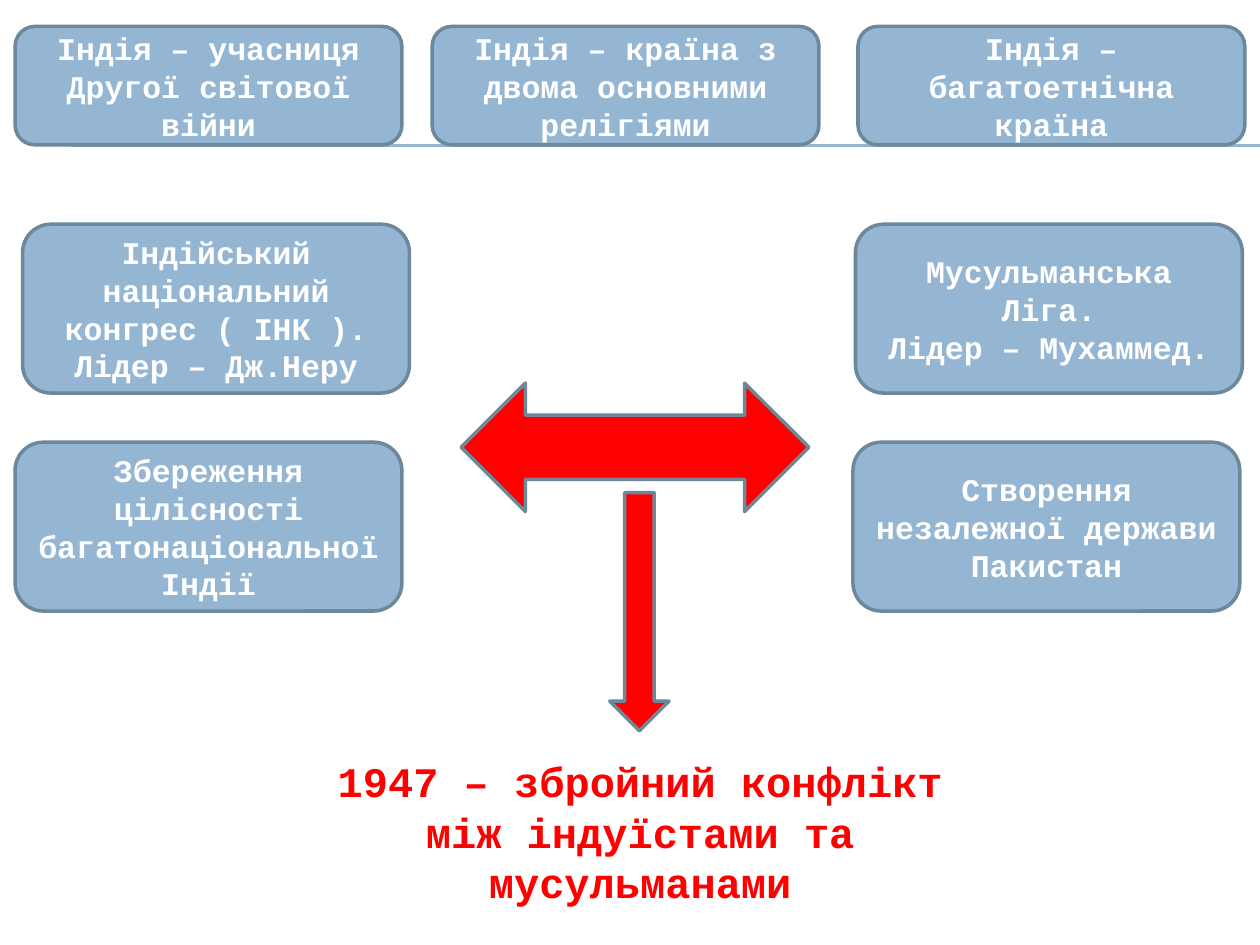
from lxml import etree
from pptx import Presentation
from pptx.dml.color import RGBColor
from pptx.enum.shapes import MSO_CONNECTOR, MSO_SHAPE
from pptx.enum.text import MSO_ANCHOR, PP_ALIGN
from pptx.oxml.ns import qn
from pptx.util import Inches, Pt

BLUE, EDGE, RED, WHITE = "94B6D2", "6D879B", "FF0000", "FFFFFF"


def write_text(shape, text, size=18, color=WHITE, anchor=MSO_ANCHOR.MIDDLE):
    """Fill the shape with centred bold text, one paragraph per line."""
    frame = shape.text_frame
    frame.word_wrap = True
    frame.vertical_anchor = anchor
    frame.text = text
    for para in frame.paragraphs:
        para.alignment = PP_ALIGN.CENTER
        for span in para.runs:
            span.font.name = "Courier New"
            span.font.size = Pt(size)
            span.font.bold = True
            span.font.color.rgb = RGBColor.from_string(color)


def add_block(kind, left, top, width, height, fill):
    block = page.shapes.add_shape(
        kind, Inches(left), Inches(top), Inches(width), Inches(height))
    block.shadow.inherit = False
    block.fill.solid()
    block.fill.fore_color.rgb = RGBColor.from_string(fill)
    block.line.color.rgb = RGBColor.from_string(EDGE)
    block.line.width = Pt(2)
    return block


deck = Presentation()
deck.slide_width, deck.slide_height = Inches(10), Inches(7.5)
page = deck.slides.add_slide(deck.slide_layouts[6])

# Double rule behind the top row
for y in (1.15, 1.16):
    rule = page.shapes.add_connector(
        MSO_CONNECTOR.STRAIGHT, Inches(0.56), Inches(y), Inches(10), Inches(y))
    rule.line.color.rgb = RGBColor.from_string(BLUE)
    rule.line.width = Pt(0.75)
    etree.SubElement(rule._element.spPr, qn("a:effectLst"))

# Rows of boxes: top, height, then left edge and text of each box
box_width = 3.07
rows = [
    (0.21, 0.94, [(0.12, "Індія – учасниця\nДругої світової війни"),
                  (3.43, "Індія – країна з двома основними релігіями"),
                  (6.81, "Індія – багатоетнічна країна")]),
    (1.78, 1.34, [(0.18, "Індійський національний конгрес ( ІНК ).\nЛідер – Дж.Неру"),
                  (6.79, "Мусульманська Ліга.\nЛідер – Мухаммед.")]),
    (3.51, 1.34, [(0.12, "Збереження цілісності багатонаціональної Індії"),
                  (6.77, "Створення незалежної держави Пакистан")]),
]
for top, height, boxes in rows:
    for left, text in boxes:
        box = add_block(MSO_SHAPE.ROUNDED_RECTANGLE, left, top, box_width, height, BLUE)
        write_text(box, text)

# Conflict between the two sides and its outcome
add_block(MSO_SHAPE.LEFT_RIGHT_ARROW, 3.66, 3.04, 2.76, 1.02, RED)
add_block(MSO_SHAPE.DOWN_ARROW, 4.84, 3.91, 0.47, 1.89, RED)
outcome = page.shapes.add_textbox(Inches(2.44), Inches(5.95), Inches(5.28), Inches(1.31))
write_text(outcome, "1947 – збройний конфлікт між індуїстами та мусульманами",
           size=24, color=RED, anchor=MSO_ANCHOR.TOP)

deck.save("out.pptx")
